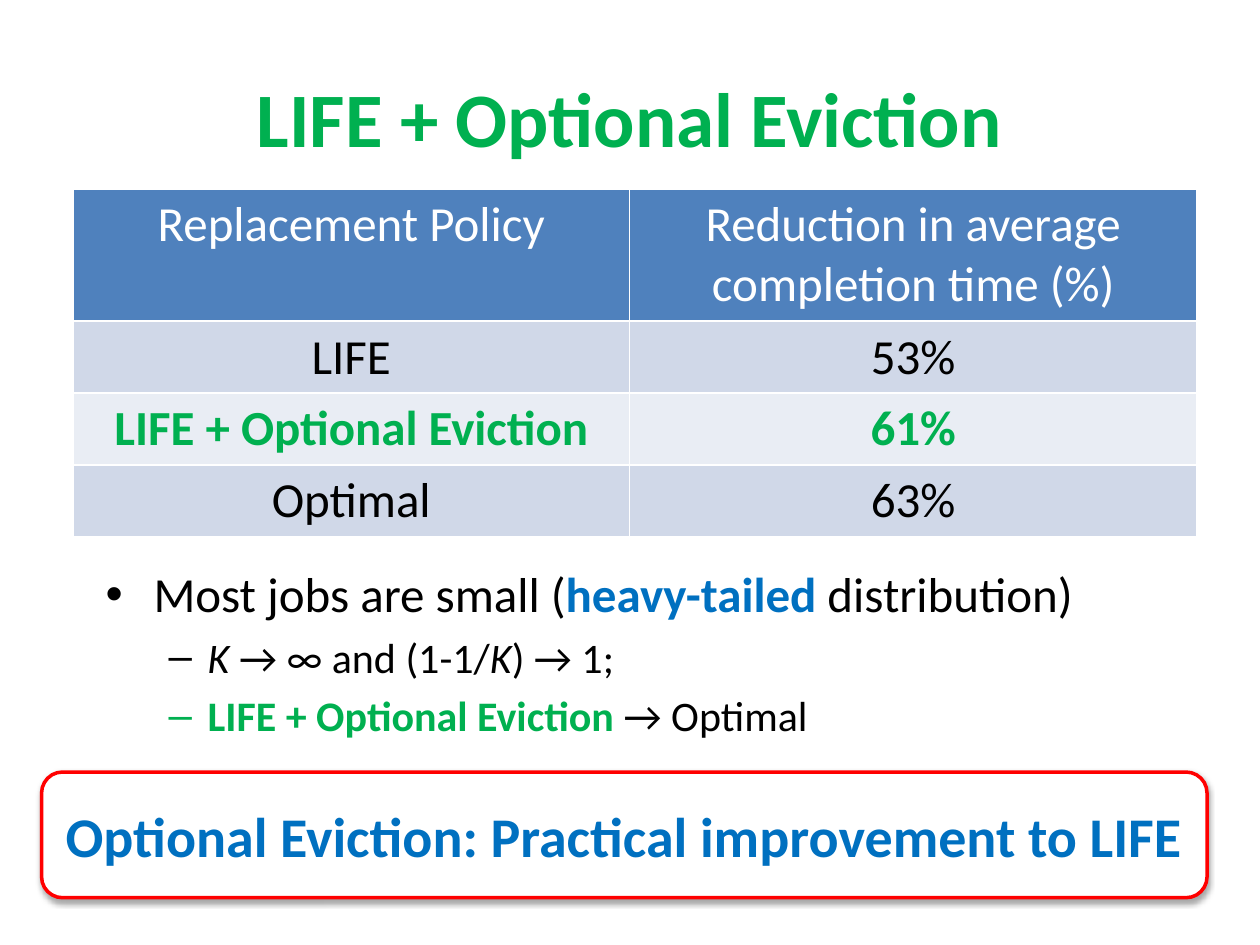
from dataclasses import dataclass

from lxml import etree
from pptx import Presentation
from pptx import util as u
from pptx.dml.color import RGBColor
from pptx.enum import shapes, text
from pptx.oxml import ns

SLIDE_WIDTH, SLIDE_HEIGHT = u.Inches(10), u.Inches(7.5)


@dataclass(frozen=True)
class Theme:
    font: str = "Calibri"
    black: str = "000000"
    white: str = "FFFFFF"
    green: str = "00B050"
    blue: str = "0070C0"
    red: str = "FF0000"
    header: str = "4F81BD"
    bands: tuple = ("D0D8E8", "E9EDF4")
    title_size: int = 44
    callout_size: int = 32
    body_size: int = 28
    detail_size: int = 24


THEME = Theme()


def share_box(left, top, width, height):
    """Turn shares of the slide into lengths."""
    return (int(left * SLIDE_WIDTH), int(top * SLIDE_HEIGHT),
            int(width * SLIDE_WIDTH), int(height * SLIDE_HEIGHT))


def add_xml(parent, tag, **attributes):
    return etree.SubElement(parent, ns.qn(tag), attributes)


def style_run(run, size, color, bold=False, italic=False):
    font = run.font
    font.name, font.size = THEME.font, u.Pt(size)
    font.bold, font.italic = bold, italic
    font.color.rgb = RGBColor.from_string(color)


def write_centred(text_frame, words, size, color, bold=False):
    text_frame.text = words
    text_frame.word_wrap = True
    paragraph = text_frame.paragraphs[0]
    paragraph.alignment = text.PP_ALIGN.CENTER
    style_run(paragraph.runs[0], size, color, bold)


def add_title(slide, box, words):
    frame = slide.shapes.add_textbox(*box).text_frame
    write_centred(frame, words, THEME.title_size, THEME.green, bold=True)
    frame.vertical_anchor = text.MSO_ANCHOR.MIDDLE


def set_cell_borders(cell):
    properties = cell._tc.get_or_add_tcPr()
    for position, side in enumerate(("a:lnL", "a:lnR", "a:lnT", "a:lnB")):
        line = add_xml(properties, side, w=str(u.Pt(1)))
        add_xml(add_xml(line, "a:solidFill"), "a:srgbClr", val=THEME.white)
        properties.insert(position, line)  # borders come before the fill


def add_policy_table(slide, box, rows, highlight, column_shares, row_shares):
    left, top, width, height = box
    table = slide.shapes.add_table(len(rows), len(rows[0]), *box).table
    for column, share in zip(table.columns, column_shares):
        column.width = int(width * share)
    for row, share in zip(table.rows, row_shares):
        row.height = int(height * share)

    for row_index, values in enumerate(rows):
        is_header, is_highlight = row_index == 0, row_index == highlight
        fill = THEME.header if is_header else THEME.bands[(row_index - 1) % 2]
        color = (THEME.white if is_header
                 else THEME.green if is_highlight else THEME.black)
        for column_index, value in enumerate(values):
            cell = table.cell(row_index, column_index)
            write_centred(cell.text_frame, value, THEME.body_size, color,
                          is_highlight)
            cell.fill.solid()
            cell.fill.fore_color.rgb = RGBColor.from_string(fill)
            set_cell_borders(cell)


def add_bullets(slide, box, bullets):
    """Each bullet is a level and its runs: words, colour, bold, italic."""
    levels = (("•", 0.38, 0.38, THEME.body_size),
              ("–", 0.81, 0.31, THEME.detail_size))
    frame = slide.shapes.add_textbox(*box).text_frame
    frame.word_wrap = True
    for index, (level, runs) in enumerate(bullets):
        paragraph = frame.add_paragraph() if index else frame.paragraphs[0]
        mark, margin, hanging, size = levels[level]
        paragraph.level = level
        paragraph.space_before = u.Pt(0.2 * size)
        properties = paragraph._p.get_or_add_pPr()
        properties.set("marL", str(u.Inches(margin)))
        properties.set("indent", str(-u.Inches(hanging)))
        add_xml(properties, "a:buFont", typeface="Arial")
        add_xml(properties, "a:buChar", char=mark)
        for words, *style in runs:
            run = paragraph.add_run()
            run.text = words
            style_run(run, size, *style)


def add_callout(slide, box, words):
    shape = slide.shapes.add_shape(
        shapes.MSO_SHAPE.ROUNDED_RECTANGLE, *box)
    shape.fill.solid()
    shape.fill.fore_color.rgb = RGBColor.from_string(THEME.white)
    shape.line.color.rgb = RGBColor.from_string(THEME.red)
    shape.line.width = u.Pt(2)
    write_centred(shape.text_frame, words, THEME.callout_size, THEME.blue,
                  bold=True)
    shape.text_frame.vertical_anchor = text.MSO_ANCHOR.MIDDLE

    # Soft shadow straight below
    shape.shadow.inherit = False
    effects = shape._element.spPr.find(ns.qn("a:effectLst"))
    shadow = add_xml(effects, "a:outerShdw", blurRad=str(u.Pt(3.1)),
                     dist=str(u.Pt(1.8)), dir="5400000", rotWithShape="0")
    color = add_xml(shadow, "a:srgbClr", val=THEME.black)
    add_xml(color, "a:alpha", val="35000")


def build_results_slide(presentation):
    slide = presentation.slides.add_slide(presentation.slide_layouts[6])

    # Title
    add_title(slide, share_box(0.05, 0.04, 0.9, 1 / 6),
              "LIFE + Optional Eviction")

    # Comparison of policies
    add_policy_table(
        slide, share_box(0.058, 0.2, 0.892, 0.368),
        [("Replacement Policy", "Reduction in average completion time (%)"),
         ("LIFE", "53%"),
         ("LIFE + Optional Eviction", "61%"),
         ("Optimal", "63%")],
        highlight=2,
        column_shares=(0.495, 0.505),
        row_shares=(0.38,) + (0.62 / 3,) * 3)

    # Explanation
    plain, slanted = (THEME.black,), (THEME.black, False, True)
    add_bullets(slide, share_box(0.074, 0.59, 0.885, 0.233), [
        (0, [("Most jobs are small (", *plain),
             ("heavy-tailed ", THEME.blue, True),
             ("distribution)", *plain)]),
        (1, [("K ", *slanted), ("→ ∞ and (1-1/", *plain),
             ("K", *slanted), (") → 1;", *plain)]),
        (1, [("LIFE + Optional Eviction", THEME.green, True),
             (" → Optimal", *plain)]),
    ])

    # Conclusion
    add_callout(slide, share_box(0.033, 0.817, 0.925, 0.133),
                "Optional Eviction: Practical improvement to LIFE")


def main():
    presentation = Presentation()
    presentation.slide_width = SLIDE_WIDTH
    presentation.slide_height = SLIDE_HEIGHT
    build_results_slide(presentation)
    presentation.save("out.pptx")


if __name__ == "__main__":
    main()
